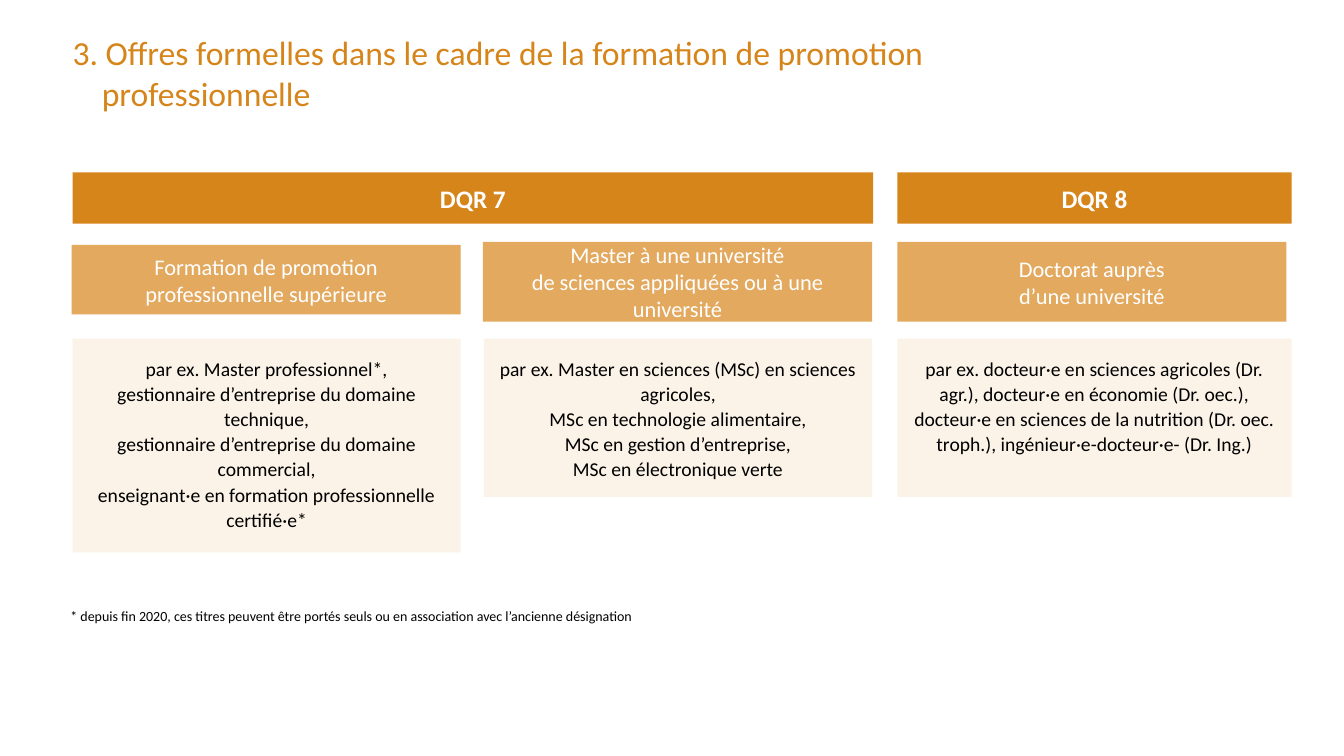
from copy import deepcopy
from dataclasses import dataclass

from pptx import Presentation
from pptx import util as u
from pptx.dml.color import RGBColor
from pptx.enum import shapes, text
from pptx.oxml.ns import qn

PX = 9144  # EMU per px, 100 px to the inch
FONT = "Calibri"
ORANGE = RGBColor(0xD6, 0x85, 0x1B)
AMBER = RGBColor(0xE2, 0xA9, 0x5F)
CREAM = RGBColor(0xFB, 0xF3, 0xE8)
WHITE = RGBColor(0xFF, 0xFF, 0xFF)
BLACK = RGBColor(0, 0, 0)
LEFT, MID = text.PP_ALIGN.LEFT, text.PP_ALIGN.CENTER
TOP, CORE = text.MSO_ANCHOR.TOP, text.MSO_ANCHOR.MIDDLE


@dataclass
class Box:
    x: int
    y: int
    w: int
    h: int
    words: str


@dataclass
class Style:
    fill: RGBColor
    ink: RGBColor
    size: int
    inset: tuple[int, int, int, int]
    anchor: text.MSO_ANCHOR = CORE
    bold: bool = False
    lead: int | None = None


LEVEL = Style(ORANGE, WHITE, 18, (4, 8, 4, 0), bold=True, lead=17)
KIND = Style(AMBER, WHITE, 16, (4, 8, 4, 8))
CASE = Style(CREAM, BLACK, 14, (8, 16, 8, 16), anchor=TOP, lead=18)

ROWS = [
    (LEVEL, [
        Box(72, 171, 794, 51, "DQR 7"),
        Box(890, 171, 391, 51, "DQR 8"),
    ]),
    (KIND, [
        Box(71, 243, 386, 69,
            "Formation de promotion\nprofessionnelle supérieure"),
        Box(479, 240, 386, 79,
            "Master à une université\n"
            "de sciences appliquées ou à une université"),
        Box(890, 240, 386, 79, "Doctorat auprès\nd’une université"),
    ]),
    (CASE, [
        Box(72, 336, 385, 212,
            "par ex. Master professionnel*,\n"
            "gestionnaire d’entreprise du domaine technique,\n"
            "gestionnaire d’entreprise du domaine commercial,\n"
            "enseignant·e en formation professionnelle certifié·e*"),
        Box(480, 336, 385, 157,
            "par ex. Master en sciences (MSc) en sciences agricoles,\n"
            "MSc en technologie alimentaire,\n"
            "MSc en gestion d’entreprise,\n"
            "MSc en électronique verte"),
        Box(890, 336, 391, 157,
            "par ex. docteur·e en sciences agricoles (Dr. agr.), "
            "docteur·e en économie (Dr. oec.), "
            "docteur·e en sciences de la nutrition (Dr. oec. troph.), "
            "ingénieur·e-docteur·e- (Dr. Ing.)"),
    ]),
]
TITLE = Box(72, 32, 984, 121, "3. Offres formelles dans le cadre de la "
            "formation de promotion professionnelle")
NOTE = Box(60, 598, 811, 27, "* depuis fin 2020, ces titres peuvent être "
           "portés seuls ou en association avec l’ancienne désignation")


def area(box: Box) -> tuple[int, ...]:
    return tuple(v * PX for v in (box.x, box.y, box.w, box.h))


def write(shape, words: str, *, size: int, ink: RGBColor,
          inset: tuple[int, int, int, int], align=LEFT, anchor=TOP,
          bold: bool = False, lead: int | None = None, hang: int = 0) -> None:
    """Fill a shape with one paragraph; line breaks share the run format."""
    frame = shape.text_frame
    frame.word_wrap = True
    frame.vertical_anchor = anchor
    (frame.margin_left, frame.margin_top,
     frame.margin_right, frame.margin_bottom) = (v * PX for v in inset)
    par = frame.paragraphs[0]
    par.text = words
    par.alignment = align
    if lead:
        par.line_spacing = u.Pt(lead)
    if hang:
        props = par._p.get_or_add_pPr()
        props.set("marL", str(hang * PX))
        props.set("indent", str(-hang * PX))
    for run in par.runs:
        run.font.name = FONT
        run.font.size = u.Pt(size)
        run.font.bold = bold
        run.font.color.rgb = ink
    look = par.runs[0]._r.rPr
    for gap in par._p.findall(qn("a:br")):
        gap.insert(0, deepcopy(look))


def block(slide, box: Box, style: Style) -> None:
    shape = slide.shapes.add_shape(shapes.MSO_SHAPE.RECTANGLE, *area(box))
    shape.shadow.inherit = False
    shape.fill.solid()
    shape.fill.fore_color.rgb = style.fill
    shape.line.fill.background()
    write(shape, box.words, size=style.size, ink=style.ink, inset=style.inset,
          align=MID, anchor=style.anchor, bold=style.bold, lead=style.lead)


def main() -> None:
    deck = Presentation()
    deck.slide_width, deck.slide_height = 1333 * PX, 750 * PX
    slide = deck.slides.add_slide(deck.slide_layouts[6])
    write(slide.shapes.add_textbox(*area(TITLE)), TITLE.words,
          size=24, ink=ORANGE, inset=(0, 0, 0, 0), hang=29)
    for style, boxes in ROWS:
        for box in boxes:
            block(slide, box, style)
    write(slide.shapes.add_textbox(*area(NOTE)), NOTE.words,
          size=10, ink=BLACK, inset=(10, 5, 10, 5))
    deck.save("out.pptx")


if __name__ == "__main__":
    main()
